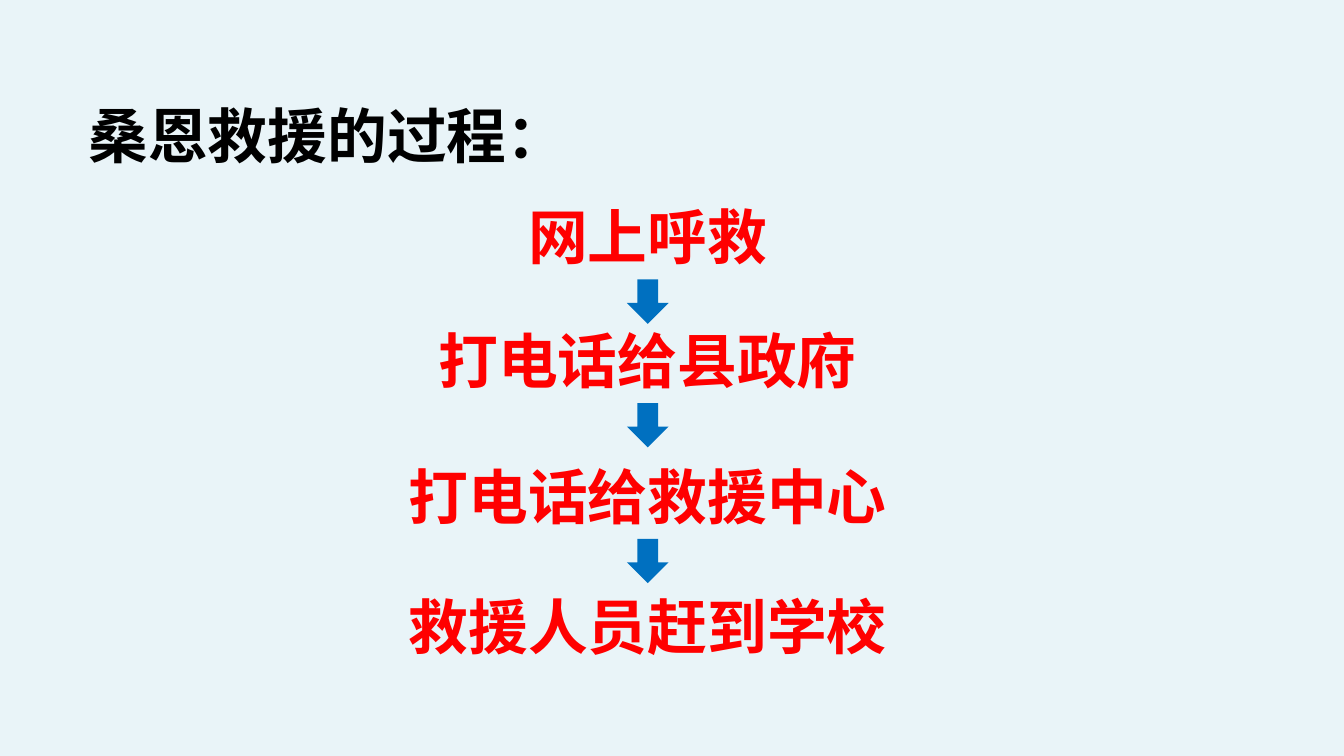
from dataclasses import dataclass

from lxml.etree import SubElement
from pptx import Presentation
from pptx.dml.color import RGBColor
from pptx.enum.shapes import MSO_SHAPE
from pptx.enum.text import MSO_AUTO_SIZE, PP_ALIGN
from pptx.oxml.ns import qn
from pptx.slide import Slide
from pptx.util import Inches, Pt

COLORS = {
    "background": "E9F4F8",
    "title": "000000",
    "step": "FF0000",
    "arrow": "0070C0",
}
CJK_FONT = "Noto Sans CJK SC"
SLIDE_WIDTH = 10
SLIDE_HEIGHT = SLIDE_WIDTH * 9 / 16
STEP_LEFT, STEP_WIDTH, STEP_HEIGHT = 2.64, 4.36, 0.64
ARROW_WIDTH, ARROW_HEIGHT = 0.31, 0.33


@dataclass
class Label:
    text: str
    left: float
    top: float
    width: float
    height: float
    color: str
    font: str
    alignment: PP_ALIGN
    line_spacing: float = 1.0


@dataclass
class Step:
    text: str
    top: float


TITLE = Label("桑恩救援的过程：", 0.56, 0.58, 4.04, 0.66,
              "title", CJK_FONT, PP_ALIGN.LEFT, 1.2)
STEPS = [
    Step("网上呼救", 1.44),
    Step("打电话给县政府", 2.36),
    Step("打电话给救援中心", 3.37),
    Step("救援人员赶到学校", 4.34),
]


def rgb(name: str) -> RGBColor:
    return RGBColor.from_string(COLORS[name])


def add_label(slide: Slide, label: Label) -> None:
    shape = slide.shapes.add_textbox(Inches(label.left), Inches(label.top),
                                     Inches(label.width), Inches(label.height))
    text_frame = shape.text_frame
    text_frame.word_wrap = True
    text_frame.auto_size = MSO_AUTO_SIZE.SHAPE_TO_FIT_TEXT
    text_frame.text = label.text
    paragraph = text_frame.paragraphs[0]
    paragraph.alignment = label.alignment
    paragraph.line_spacing = label.line_spacing
    font = paragraph.runs[0].font
    font.name = label.font
    font.size = Pt(32)
    font.bold = True
    font.color.rgb = rgb(label.color)
    properties = paragraph.runs[0].font._element
    SubElement(properties, qn("a:ea")).set("typeface", CJK_FONT)


def add_step(slide: Slide, step: Step) -> None:
    add_label(slide, Label(step.text, STEP_LEFT, step.top, STEP_WIDTH,
                           STEP_HEIGHT, "step", "Arial", PP_ALIGN.CENTER))


def add_arrow_below(slide: Slide, step: Step) -> None:
    left = STEP_LEFT + (STEP_WIDTH - ARROW_WIDTH) / 2
    arrow = slide.shapes.add_shape(
        MSO_SHAPE.DOWN_ARROW, Inches(left), Inches(step.top + STEP_HEIGHT),
        Inches(ARROW_WIDTH), Inches(ARROW_HEIGHT))
    arrow.shadow.inherit = False
    arrow.fill.solid()
    arrow.fill.fore_color.rgb = rgb("arrow")
    arrow.line.fill.background()


def main() -> None:
    presentation = Presentation()
    presentation.slide_width = Inches(SLIDE_WIDTH)
    presentation.slide_height = Inches(SLIDE_HEIGHT)
    slide = presentation.slides.add_slide(presentation.slide_layouts[6])
    slide.background.fill.solid()
    slide.background.fill.fore_color.rgb = rgb("background")

    add_label(slide, TITLE)
    for step in STEPS:
        add_step(slide, step)
    for step in STEPS[:-1]:
        add_arrow_below(slide, step)
    presentation.save("out.pptx")


if __name__ == "__main__":
    main()
